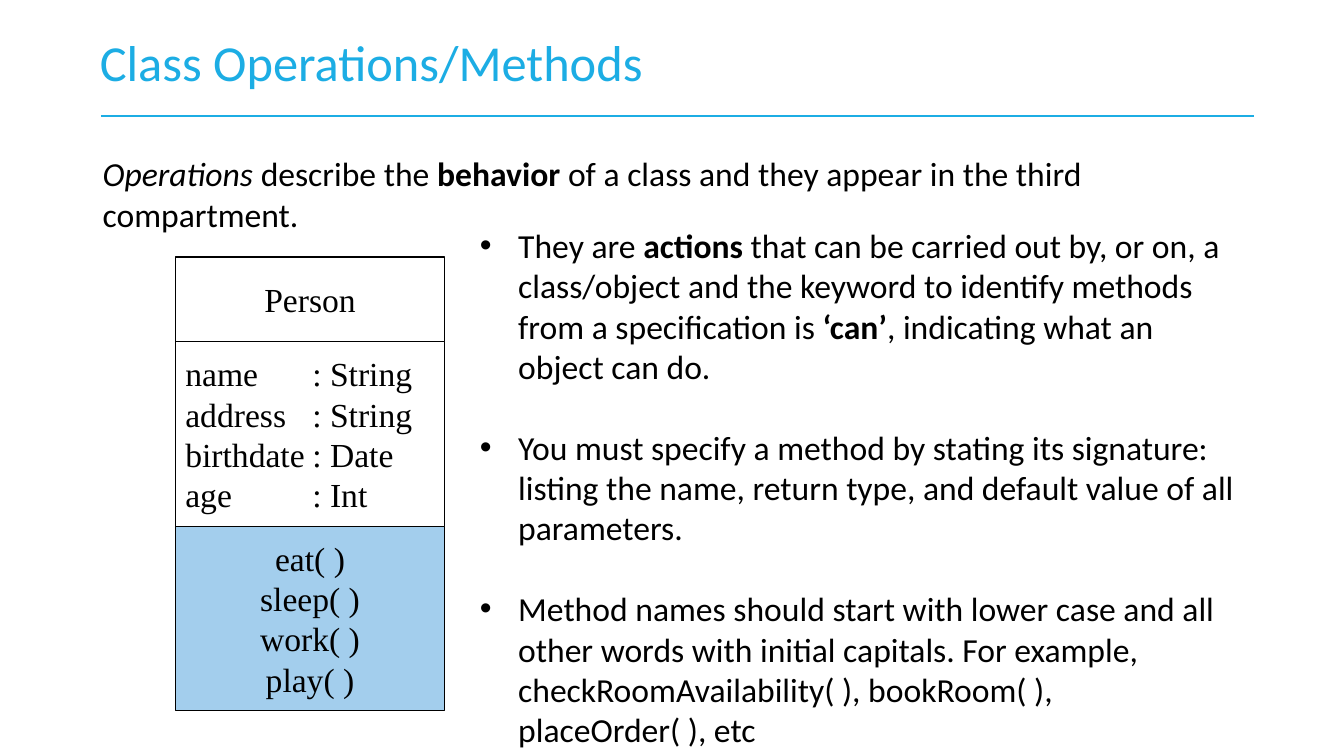
"""Build a slide on class operations with a UML class box and notes."""
from dataclasses import dataclass

from lxml import etree
from pptx import Presentation
from pptx.dml.color import RGBColor
from pptx.enum.shapes import MSO_CONNECTOR, MSO_SHAPE
from pptx.enum.text import MSO_ANCHOR, MSO_AUTO_SIZE, PP_ALIGN
from pptx.oxml.ns import qn
from pptx.util import Inches, Pt

LEFT, CENTER = PP_ALIGN.LEFT, PP_ALIGN.CENTER
TOP, MIDDLE = MSO_ANCHOR.TOP, MSO_ANCHOR.MIDDLE
NO_FIT = MSO_AUTO_SIZE.NONE
RECTANGLE = MSO_SHAPE.RECTANGLE
STRAIGHT = MSO_CONNECTOR.STRAIGHT


@dataclass(frozen=True)
class Theme:
    """Colours, fonts and type sizes of the slide."""
    accent: RGBColor = RGBColor.from_string("1CADE4")
    ink: RGBColor = RGBColor.from_string("000000")
    paper: RGBColor = RGBColor.from_string("FFFFFF")
    highlight: RGBColor = RGBColor.from_string("A3CEED")
    sans: str = "Calibri"
    serif: str = "Times New Roman"
    title_size: Pt = Pt(36)
    text_size: Pt = Pt(24)
    bullet_gap: Pt = Pt(29)


THEME = Theme()

TITLE = [[("Class Operations/Methods", "")]]
INTRO = [[
    ("Operations ", "italic"),
    ("describe the ", ""),
    ("behavior", "bold"),
    (" of a class and they appear in the third compartment.", ""),
]]
NOTES = [
    [
        ("They are ", ""),
        ("actions", "bold"),
        (" that can be carried out by, or on, a class/object and the keyword "
         "to identify methods from a specification is ", ""),
        ("‘can’", "bold"),
        (", indicating what an object can do.", ""),
    ],
    [("You must specify a method by stating its signature: listing the name, "
      "return type, and default value of all parameters.", "")],
    [("Method names should start with lower case and all other words with "
      "initial capitals. For example, checkRoomAvailability( ), bookRoom( ), "
      "placeOrder( ), etc", "")],
]
ATTRIBUTES = [("name", "String"), ("address", "String"),
              ("birthdate", "Date"), ("age", "Int")]
METHODS = ["eat( )", "sleep( )", "work( )", "play( )"]
COMPARTMENTS = [
    (["Person"], 0.84, CENTER, THEME.paper),
    ([f"{name}\t: {kind}" for name, kind in ATTRIBUTES], 1.83, LEFT, THEME.paper),
    (METHODS, 1.83, CENTER, THEME.highlight),
]

TITLE_AREA = (0.89, 0.21, 11.76, 0.79)
INTRO_AREA = (0.92, 1.47, 11.58, 0.91)
NOTES_AREA = (4.66, 2.18, 7.68, 5.3)
RULE_ENDS = (1, 1.15, 12.44, 1.15)
CLASS_LEFT, CLASS_TOP, CLASS_WIDTH = 1.74, 2.55, 2.67
TYPE_TAB = 1.26
BULLET_INDENT = 0.38


def inches(values):
    """Turn plain numbers into lengths."""
    return [Inches(value) for value in values]


def place(shape, area):
    """Move a shape to its area."""
    for name, value in zip(("left", "top", "width", "height"), inches(area)):
        setattr(shape, name, value)


def write(shape, paragraphs, anchor=TOP, align=LEFT, **font):
    """Fill a shape with paragraphs of styled spans and return them."""
    frame = shape.text_frame
    frame_format = {"word_wrap": True, "auto_size": NO_FIT, "vertical_anchor": anchor}
    for name, value in frame_format.items():
        setattr(frame, name, value)
    look = {"name": THEME.sans, "size": THEME.text_size, "color": THEME.ink} | font
    color = look.pop("color")
    for index, spans in enumerate(paragraphs):
        para = frame.paragraphs[0] if index == 0 else frame.add_paragraph()
        para.alignment = align
        para.space_before = Pt(0)
        for text, style in spans:
            span = para.add_run()
            span.text = text
            span.font.color.rgb = color
            for name, value in (look | ({style: True} if style else {})).items():
                setattr(span.font, name, value)
    return frame.paragraphs


def add_rule(page):
    """Draw the line under the title."""
    rule = page.shapes.add_connector(STRAIGHT, *inches(RULE_ENDS))
    rule.line.color.rgb = THEME.accent
    rule.line.width = Pt(1)
    etree.SubElement(rule.element.spPr, qn("a:effectLst"))


def add_class_box(page):
    """Stack the compartments of the class from top to bottom."""
    group = page.shapes.add_group_shape()
    top = CLASS_TOP
    for lines, height, align, fill in COMPARTMENTS:
        area = inches((CLASS_LEFT, top, CLASS_WIDTH, height))
        box = group.shapes.add_shape(RECTANGLE, *area)
        box.shadow.inherit = False
        box.fill.solid()
        box.fill.fore_color.rgb = fill
        box.line.color.rgb = THEME.ink
        box.line.width = Pt(0.75)
        rows = [[(line, "")] for line in lines]
        for para in write(box, rows, MIDDLE, align, name=THEME.serif):
            if align == LEFT:
                tabs = etree.SubElement(para._p.get_or_add_pPr(), qn("a:tabLst"))
                etree.SubElement(tabs, qn("a:tab"), pos=str(Inches(TYPE_TAB)), algn="l")
        top += height


def add_notes(body):
    """Set the bulleted notes in the body placeholder."""
    place(body, NOTES_AREA)
    for index, para in enumerate(write(body, NOTES)):
        para.space_before = THEME.bullet_gap if index else Pt(0)
        properties = para._p.get_or_add_pPr()
        properties.set("marL", str(Inches(BULLET_INDENT)))
        properties.set("indent", str(-Inches(BULLET_INDENT)))
        etree.SubElement(properties, qn("a:buFont"), typeface="Arial")
        etree.SubElement(properties, qn("a:buChar"), char="•")


def main():
    """Assemble and save the deck."""
    deck = Presentation()
    deck.slide_width, deck.slide_height = inches((13.33, 7.5))
    page = deck.slides.add_slide(deck.slide_layouts[1])
    title, body = page.placeholders
    place(title, TITLE_AREA)
    write(title, TITLE, MIDDLE, size=THEME.title_size, color=THEME.accent)
    add_rule(page)
    add_class_box(page)
    write(page.shapes.add_textbox(*inches(INTRO_AREA)), INTRO)
    add_notes(body)
    deck.save("out.pptx")


if __name__ == "__main__":
    main()
